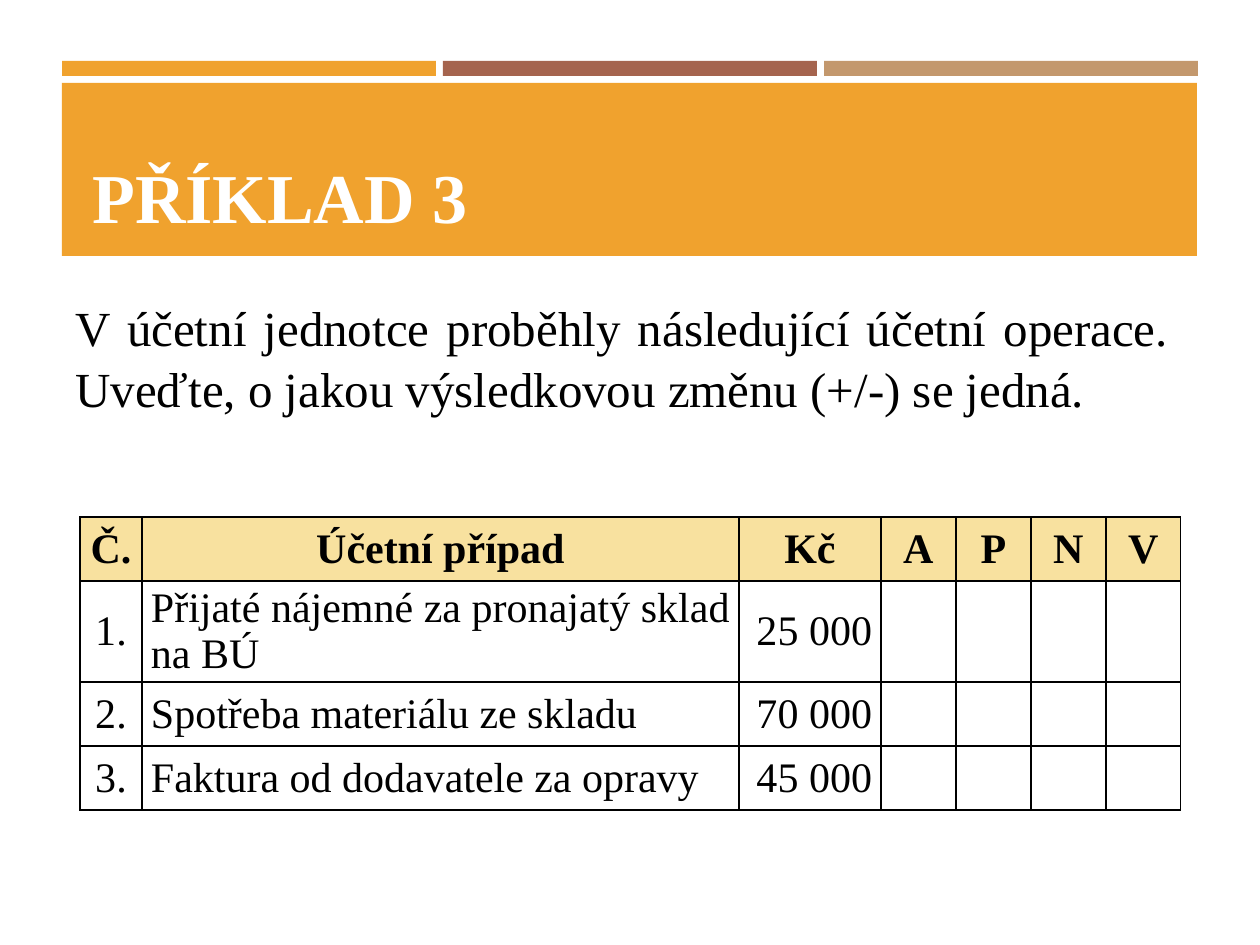
from lxml import etree
from pptx import Presentation
from pptx.dml.color import RGBColor
from pptx.enum.shapes import MSO_SHAPE
from pptx.enum.text import MSO_ANCHOR, PP_ALIGN
from pptx.oxml.ns import qn
from pptx.util import Emu, Pt

RECTANGLE = MSO_SHAPE.RECTANGLE
TOP, MIDDLE, BOTTOM = MSO_ANCHOR.TOP, MSO_ANCHOR.MIDDLE, MSO_ANCHOR.BOTTOM
LEFT, CENTER, RIGHT = PP_ALIGN.LEFT, PP_ALIGN.CENTER, PP_ALIGN.RIGHT
JUSTIFY = PP_ALIGN.JUSTIFY

ORANGE = RGBColor(0xF0, 0xA2, 0x2E)
BROWN = RGBColor(0xA5, 0x64, 0x4E)
TAN = RGBColor(0xC3, 0x98, 0x6D)
CREAM = RGBColor(0xF8, 0xE1, 0x9F)
WHITE = RGBColor(0xFF, 0xFF, 0xFF)
BLACK = RGBColor(0, 0, 0)

FONT = "Times New Roman"
PX_PER_INCH = 126
HEADERS = ["Č.", "Účetní případ", "Kč", "A", "P", "N", "V"]
CASES = [
    ["1.", "Přijaté nájemné za pronajatý sklad na BÚ", "25 000"],
    ["2.", "Spotřeba materiálu ze skladu", "70 000"],
    ["3.", "Faktura od dodavatele za opravy", "45 000"],
]
CASE_ALIGNMENTS = [CENTER, JUSTIFY, RIGHT]
COLUMN_WIDTHS = [62, 597, 142, 75, 75, 75, 75]
ROW_HEIGHTS = [64, 101, 64, 64]


def px(value):
    return Emu(round(value * 914400 / PX_PER_INCH))


def add_bar(slide, left, top, width, height, color):
    shape = slide.shapes.add_shape(RECTANGLE, px(left), px(top), px(width), px(height))
    shape.shadow.inherit = False
    shape.fill.solid()
    shape.fill.fore_color.rgb = color
    shape.line.fill.background()


def write_text(text_frame, text, size, color, alignment, bold=False):
    text_frame.text = text
    paragraph = text_frame.paragraphs[0]
    paragraph.alignment = alignment
    for run in paragraph.runs:
        run.font.name = FONT
        run.font.size = Pt(size)
        run.font.bold = bold
        run.font.color.rgb = color


def add_text(slide, left, top, width, height, text, size, color, alignment,
             anchor=TOP, bold=False, line_spacing=1.0):
    box = slide.shapes.add_textbox(px(left), px(top), px(width), px(height))
    text_frame = box.text_frame
    text_frame.word_wrap = True
    text_frame.vertical_anchor = anchor
    write_text(text_frame, text, size, color, alignment, bold)
    text_frame.paragraphs[0].line_spacing = line_spacing


def add_borders(cell):
    properties = cell._tc.get_or_add_tcPr()
    for index, side in enumerate(["a:lnL", "a:lnR", "a:lnT", "a:lnB"]):
        line = etree.Element(qn(side), w=str(Pt(1)))
        fill = etree.SubElement(line, qn("a:solidFill"))
        etree.SubElement(fill, qn("a:srgbClr"), val=str(BLACK))
        properties.insert(index, line)


def style_cell(cell, is_header):
    cell.vertical_anchor = MIDDLE
    cell.margin_left = cell.margin_right = px(9)
    cell.margin_top = cell.margin_bottom = 0
    if is_header:
        cell.fill.solid()
        cell.fill.fore_color.rgb = CREAM
    else:
        cell.fill.background()
    add_borders(cell)


def add_case_table(slide, left, top):
    rows = [HEADERS] + CASES
    frame = slide.shapes.add_table(len(rows), len(HEADERS), px(left), px(top),
                                   px(sum(COLUMN_WIDTHS)), px(sum(ROW_HEIGHTS)))
    table = frame.table
    for column, width in zip(table.columns, COLUMN_WIDTHS):
        column.width = px(width)
    for row, height in zip(table.rows, ROW_HEIGHTS):
        row.height = px(height)
    for row_index, texts in enumerate(rows):
        is_header = row_index == 0
        for cell in table.rows[row_index].cells:
            style_cell(cell, is_header)
        for column_index, text in enumerate(texts):
            alignment = CENTER if is_header else CASE_ALIGNMENTS[column_index]
            write_text(table.cell(row_index, column_index).text_frame,
                       text, 24, BLACK, alignment, is_header)


def main():
    presentation = Presentation()
    presentation.slide_width = px(1260)
    presentation.slide_height = px(945)
    slide = presentation.slides.add_slide(presentation.slide_layouts[6])

    for index, color in enumerate([ORANGE, BROWN, TAN]):
        add_bar(slide, 62 + index * 381, 61, 374, 15, color)
    add_bar(slide, 62, 83, 1135, 173, ORANGE)

    add_text(slide, 80, 95, 1101, 149, "PŘÍKLAD 3", 40, WHITE, LEFT,
             anchor=BOTTOM, bold=True)
    add_text(slide, 63, 288, 1118, 131,
             "V účetní jednotce proběhly následující účetní operace. "
             "Uveďte, o jakou výsledkovou změnu (+/-) se jedná.",
             28, BLACK, JUSTIFY, line_spacing=1.05)
    add_case_table(slide, 80, 517)

    presentation.save("out.pptx")


if __name__ == "__main__":
    main()
